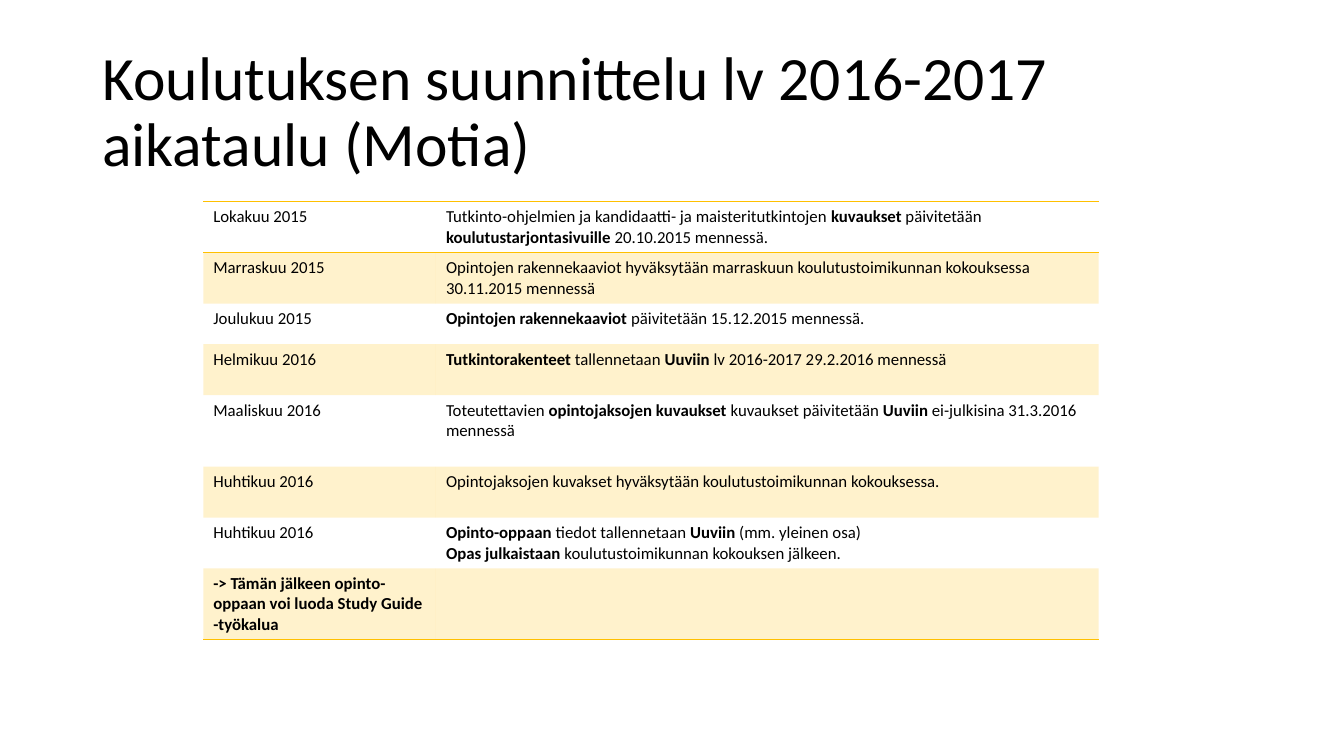
from dataclasses import dataclass

from lxml.etree import SubElement
from pptx import Presentation
from pptx.dml.color import RGBColor
from pptx.enum.text import MSO_ANCHOR
from pptx.oxml import parse_xml
from pptx.oxml.ns import nsdecls, qn
from pptx.util import Inches, Pt


@dataclass(frozen=True)
class Theme:
    ink: str = "000000"
    accent: str = "FFC000"
    tint: int = 20
    font: str = "Calibri"
    title_size: int = 44
    body_size: int = 12
    rule_width: int = 1
    line_height: float = 14.6
    cell_padding: float = 7.2
    plain_style: str = "{2D5ABB26-0587-4C30-8999-92F81FD0307C}"


SCHEDULE = [
    ("Lokakuu 2015", "Tutkinto-ohjelmien ja kandidaatti- ja maisteritutkintojen *kuvaukset* päivitetään "
     "*koulutustarjontasivuille* 20.10.2015 mennessä.", 2),
    ("Marraskuu 2015", "Opintojen rakennekaaviot hyväksytään marraskuun koulutustoimikunnan kokouksessa "
     "30.11.2015 mennessä", 2),
    ("Joulukuu 2015", "*Opintojen rakennekaaviot *päivitetään 15.12.2015 mennessä.", 1.5),
    ("Helmikuu 2016", "*Tutkintorakenteet* tallennetaan *Uuviin* lv 2016-2017 29.2.2016 mennessä", 2),
    ("Maaliskuu 2016", "Toteutettavien *opintojaksojen kuvaukset *kuvaukset päivitetään *Uuviin* "
     "ei-julkisina 31.3.2016 mennessä", 3),
    ("Huhtikuu 2016", "Opintojaksojen kuvakset hyväksytään koulutustoimikunnan kokouksessa.", 2),
    ("Huhtikuu 2016", "*Opinto-oppaan* tiedot tallennetaan *Uuviin* (mm. yleinen osa)\n"
     "*Opas julkaistaan* koulutustoimikunnan kokouksen jälkeen.", 2),
    ("*-> Tämän jälkeen opinto-oppaan voi luoda Study Guide -työkalua*", "", 3),
]


def write(frame, text, *, size, color, font, spacing=None):
    frame.word_wrap = True
    for index, line in enumerate(text.split("\n")):
        paragraph = frame.add_paragraph() if index else frame.paragraphs[0]
        paragraph.line_spacing = spacing
        paragraph.font.size = Pt(size)
        for position, part in enumerate(line.split("*")):
            if part:
                run = paragraph.add_run()
                run.text = part
                run.font.size = Pt(size)
                run.font.name = font
                run.font.bold = position % 2 == 1
                run.font.color.rgb = RGBColor.from_string(color)


class SlideBuilder:
    """Places styled elements on a slide grid of 160 columns by 90 rows."""

    def __init__(self, deck, theme):
        self.theme = theme
        self.slide = deck.slides.add_slide(deck.slide_layouts[6])
        self.column = deck.slide_width / 160
        self.row = deck.slide_height / 90

    def across(self, columns):
        return round(columns * self.column)

    def down(self, rows):
        return round(rows * self.row)

    def title(self, text, left, top, width, height):
        heading = self.slide.shapes.add_textbox(
            self.across(left), self.down(top), self.across(width), self.down(height))
        heading.text_frame.vertical_anchor = MSO_ANCHOR.MIDDLE
        write(heading.text_frame, text, size=self.theme.title_size, color=self.theme.ink,
              font=self.theme.font, spacing=0.9)

    def schedule(self, entries, left, top, widths):
        theme = self.theme
        heights = [Pt(theme.cell_padding + theme.line_height * lines) for *_, lines in entries]
        table = self.slide.shapes.add_table(
            len(entries), len(widths), self.across(left), self.down(top),
            self.across(sum(widths)), sum(heights)).table
        table.first_row = table.horz_banding = False
        table._tbl.tblPr.find(qn("a:tableStyleId")).text = theme.plain_style
        for column, width in zip(table.columns, widths):
            column.width = self.across(width)
        for index, (*texts, _) in enumerate(entries):
            table.rows[index].height = heights[index]
            edges = {0: "TB", len(entries) - 1: "B"}.get(index, "")
            for cell, text in zip(table.rows[index].cells, texts):
                write(cell.text_frame, text, size=theme.body_size, color=theme.ink, font=theme.font)
                self.shade(cell, index % 2 == 1)
                self.rule(cell, edges)

    def shade(self, cell, tinted):
        if not tinted:
            cell.fill.background()
            return
        cell.fill.solid()
        cell.fill.fore_color.rgb = RGBColor.from_string(self.theme.accent)
        tone = cell._tc.tcPr.find(qn("a:solidFill")).find(qn("a:srgbClr"))
        SubElement(tone, qn("a:alpha"), val=str(self.theme.tint * 1000))

    def rule(self, cell, edges):
        for position, edge in enumerate(edges):
            cell._tc.tcPr.insert(position, parse_xml(
                f'<a:ln{edge} {nsdecls("a")} w="{Pt(self.theme.rule_width)}"><a:solidFill>'
                f'<a:srgbClr val="{self.theme.accent}"/></a:solidFill></a:ln{edge}>'))


def main():
    deck = Presentation()
    deck.slide_width, deck.slide_height = Inches(13.33), Inches(7.5)
    builder = SlideBuilder(deck, Theme())
    builder.title("Koulutuksen suunnittelu lv 2016-2017 aikataulu (Motia)", 11, 4.8, 138, 17.4)
    builder.schedule(SCHEDULE, 24.2, 24, (27.7, 78.9))
    deck.save("out.pptx")


if __name__ == "__main__":
    main()
